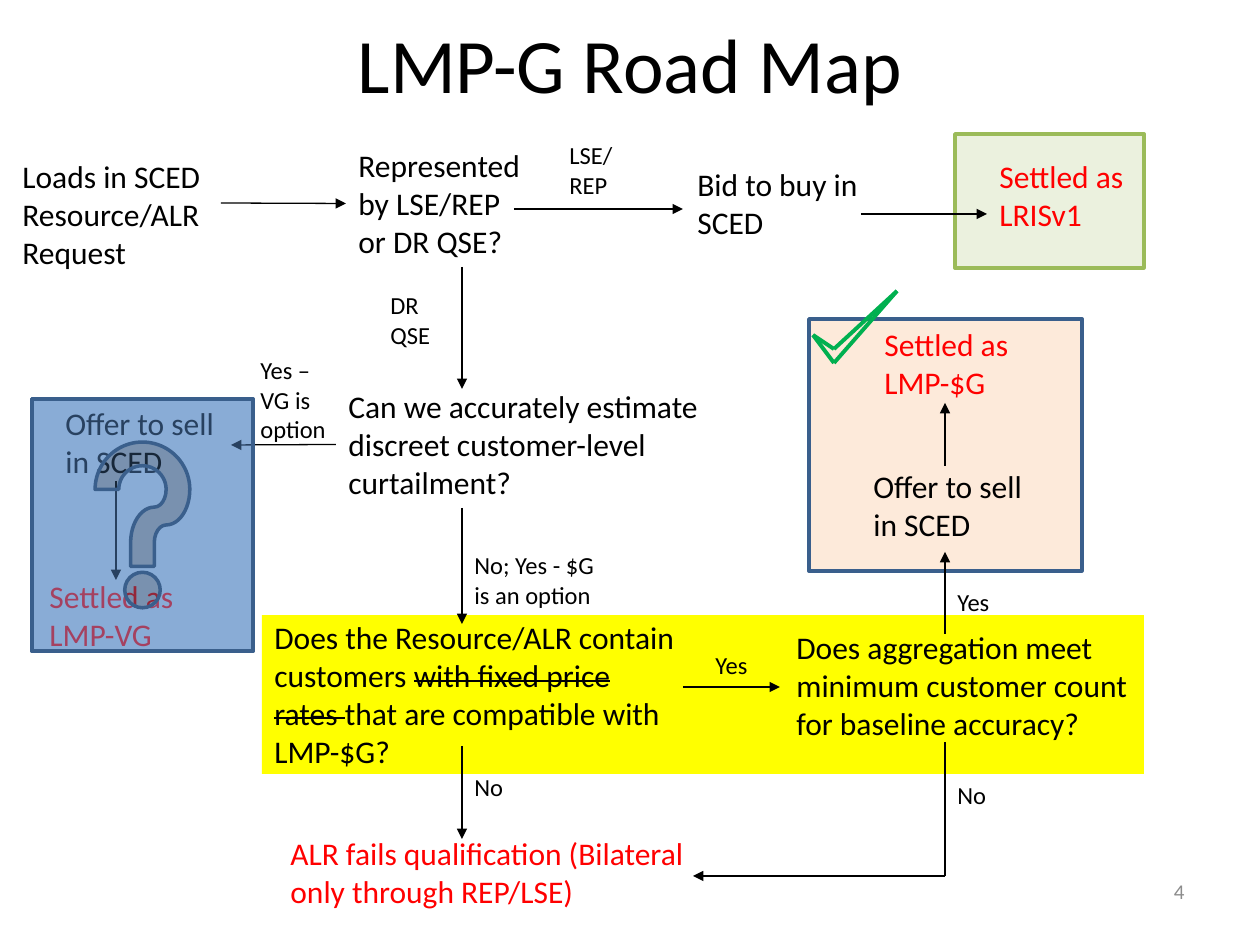
from itertools import pairwise

from lxml import etree
from pptx import Presentation
from pptx import util as u
from pptx.dml.color import RGBColor
from pptx.enum import shapes, text
from pptx.oxml.ns import qn

SCALE = 914400 / 126
BLACK, RED, GREEN, BLUE = "000000", "FF0000", "00B050", "3A5F8C"

PANELS = [
    ((262, 615, 882, 159), "FFFF00", None),
    ((955, 134, 189, 134), "EBF1DE", "9BBB59"),
    ((32, 399, 221, 252), "C6D9F1", BLUE),
    ((809, 319, 273, 252), "FDEADA", BLUE),
]

STEPS = [
    ((10, 151, 273, 127), "Loads in SCED Resource/ALR Request"),
    ((53, 398, 189, 89), "Offer to sell in SCED"),
    ((685, 159, 189, 89), "Bid to buy in SCED"),
    ((784, 622, 360, 127), "Does aggregation meet minimum customer count for baseline accuracy?"),
    ((861, 461, 189, 89), "Offer to sell in SCED"),
]

OUTCOMES = [
    ((278, 828, 436, 89), "ALR fails qualification (Bilateral only through REP/LSE)"),
    ((37, 571, 158, 89), "Settled as LMP-VG"),
    ((987, 151, 168, 89), "Settled as LRISv1"),
    ((872, 319, 189, 89), "Settled as LMP-$G"),
]

LABELS = [
    ((248, 349, 95, 102), "Yes – VG is option"),
    ((462, 544, 147, 72), "No; Yes - $G is an option"),
    ((378, 284, 84, 72), "DR QSE"),
    ((557, 134, 84, 72), "LSE/ REP"),
    ((462, 766, 63, 43), "No"),
    ((703, 644, 63, 43), "Yes"),
    ((945, 581, 63, 43), "Yes"),
    ((945, 774, 63, 43), "No"),
]

ARROWS = [
    ((514, 209), (683, 209)),
    ((462, 267), (462, 389)),
    ((861, 214), (987, 214)),
    ((462, 508), (462, 624)),
    ((462, 746), (462, 839)),
    ((683, 687), (780, 687)),
    ((116, 481), (116, 580)),
    ((945, 466), (945, 403)),
    ((945, 876), (693, 876)),
    ((945, 634), (945, 552)),
]

CHECK_MARK = [(813, 335), (834, 363), (897, 291), (834, 349), (813, 335)]


def px(value):
    return u.Emu(round(value * SCALE))


def color(value):
    return RGBColor.from_string(value)


def apply(target, **values):
    for name, value in values.items():
        setattr(target, name, value)


def add_panel(slide, box, fill, line=None, kind=shapes.MSO_SHAPE.RECTANGLE):
    shape = slide.shapes.add_shape(kind, *map(px, box))
    shape.shadow.inherit = False
    shape.fill.solid()
    shape.fill.fore_color.rgb = color(fill)
    if line:
        shape.line.color.rgb = color(line)
        shape.line.width = u.Pt(2)
    else:
        shape.line.fill.background()
    return shape


def add_text(slide, box, content, size=18, ink=BLACK, struck="", **frame_values):
    shape = slide.shapes.add_textbox(*map(px, box))
    frame = shape.text_frame
    apply(frame, **{"word_wrap": True, "auto_size": text.MSO_AUTO_SIZE.SHAPE_TO_FIT_TEXT, **frame_values})
    paragraph = frame.paragraphs[0]
    before, middle, after = content.partition(struck) if struck else (content, "", "")
    for part in filter(None, (before, middle, after)):
        run = paragraph.add_run()
        run.text = part
        apply(run.font, name="Calibri", size=u.Pt(size))
        run.font.color.rgb = color(ink)
        if struck and part == struck:
            run._r.get_or_add_rPr().set("strike", "sngStrike")
    return shape


def add_line(owner, start, end, ink=BLACK, width=0.75, arrow=False):
    connector = owner.shapes.add_connector(shapes.MSO_CONNECTOR.STRAIGHT, *map(px, start + end))
    connector.line.color.rgb = color(ink)
    connector.line.width = u.Pt(width)
    if arrow:
        etree.SubElement(connector.line._get_or_add_ln(), qn("a:tailEnd"), type="triangle")
    etree.SubElement(connector._element.spPr, qn("a:effectLst"))
    return connector


def add_check_mark(slide):
    group = slide.shapes.add_group_shape()
    for start, end in pairwise(CHECK_MARK):
        add_line(group, start, end, GREEN, 2.25)


def add_question_overlay(slide):
    shape = add_panel(slide, PANELS[2][0], "4F81BD", BLUE, shapes.MSO_SHAPE.ACTION_BUTTON_HELP)
    fill = shape._element.spPr.find(qn("a:solidFill"))
    etree.SubElement(fill[0], qn("a:alpha"), val="51000")


def main():
    presentation = Presentation()
    apply(presentation, slide_width=px(1260), slide_height=px(945))
    slide = presentation.slides.add_slide(presentation.slide_layouts[6])

    for panel in PANELS:
        add_panel(slide, *panel)
    number = add_text(slide, (903, 866, 294, 50), "4", 12, "8C8C8C",
                      auto_size=text.MSO_AUTO_SIZE.NONE,
                      vertical_anchor=text.MSO_ANCHOR.MIDDLE)
    number.text_frame.paragraphs[0].alignment = text.PP_ALIGN.RIGHT

    for box, content in STEPS:
        add_text(slide, box, content)
    represented = add_text(slide, (346, 140, 189, 127), "Represented by LSE/REP or DR QSE?")
    estimate = add_text(slide, (336, 381, 378, 127),
                        "Can we accurately estimate discreet customer-level curtailment?")
    add_text(slide, (262, 612, 431, 165),
             "Does the Resource/ALR contain customers with fixed price rates "
             "that are compatible with LMP-$G?", struck="with fixed price rates ")
    for box, content in OUTCOMES:
        add_text(slide, box, content, ink=RED)
    for box, content in LABELS:
        add_text(slide, box, content, 14)

    for start, end in ARROWS:
        add_line(slide, start, end, arrow=True)
    add_line(slide, (945, 876), (945, 742))
    add_line(slide, (221, 203), (346, 203), arrow=True).end_connect(represented, 1)
    add_line(slide, (336, 445), (231, 445), arrow=True).begin_connect(estimate, 1)

    title = add_text(slide, (63, 10, 1134, 158), "LMP-G Road Map", 44,
                     auto_size=text.MSO_AUTO_SIZE.NONE)
    title.text_frame.paragraphs[0].alignment = text.PP_ALIGN.CENTER
    add_check_mark(slide)
    add_question_overlay(slide)
    presentation.save("out.pptx")


if __name__ == "__main__":
    main()
